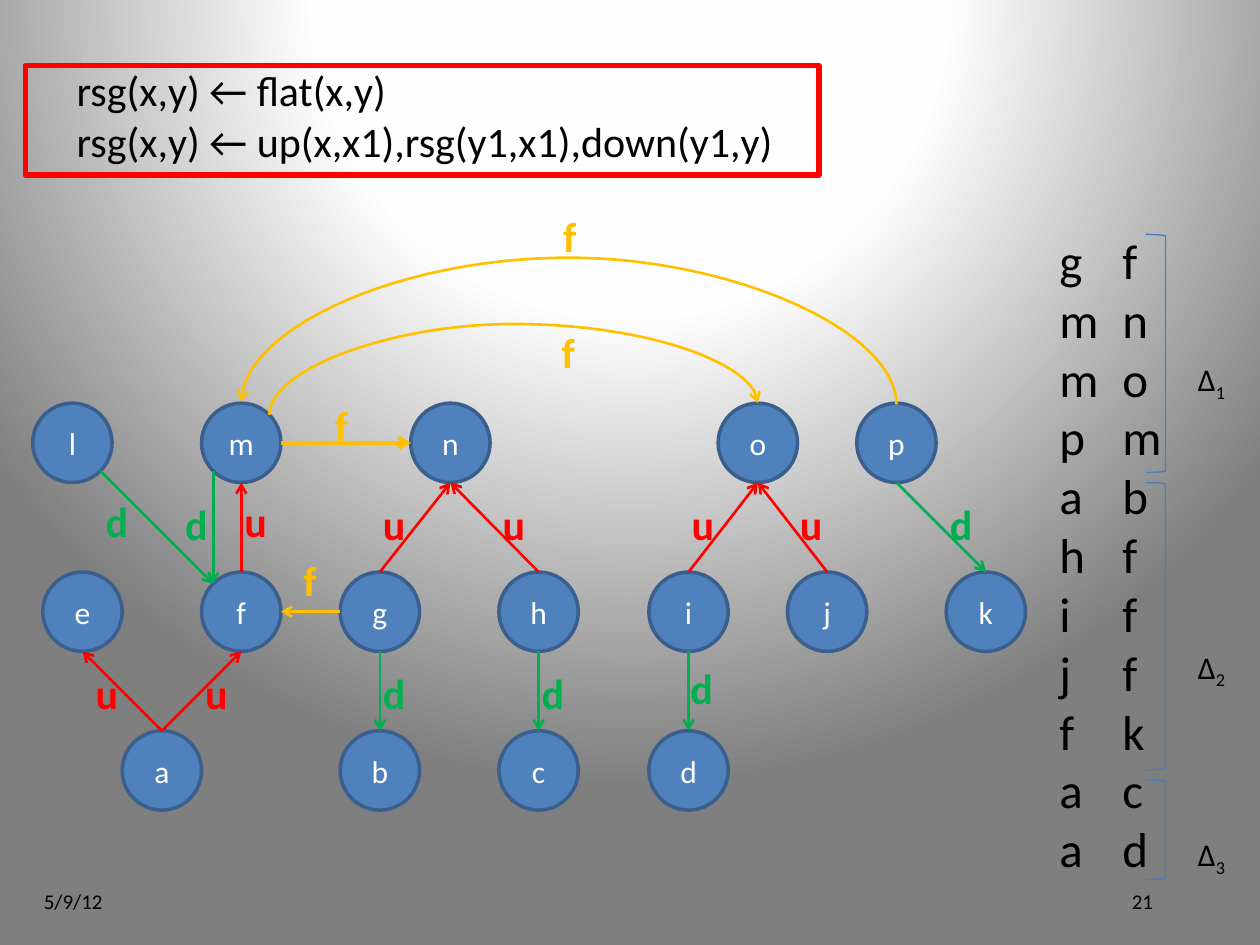
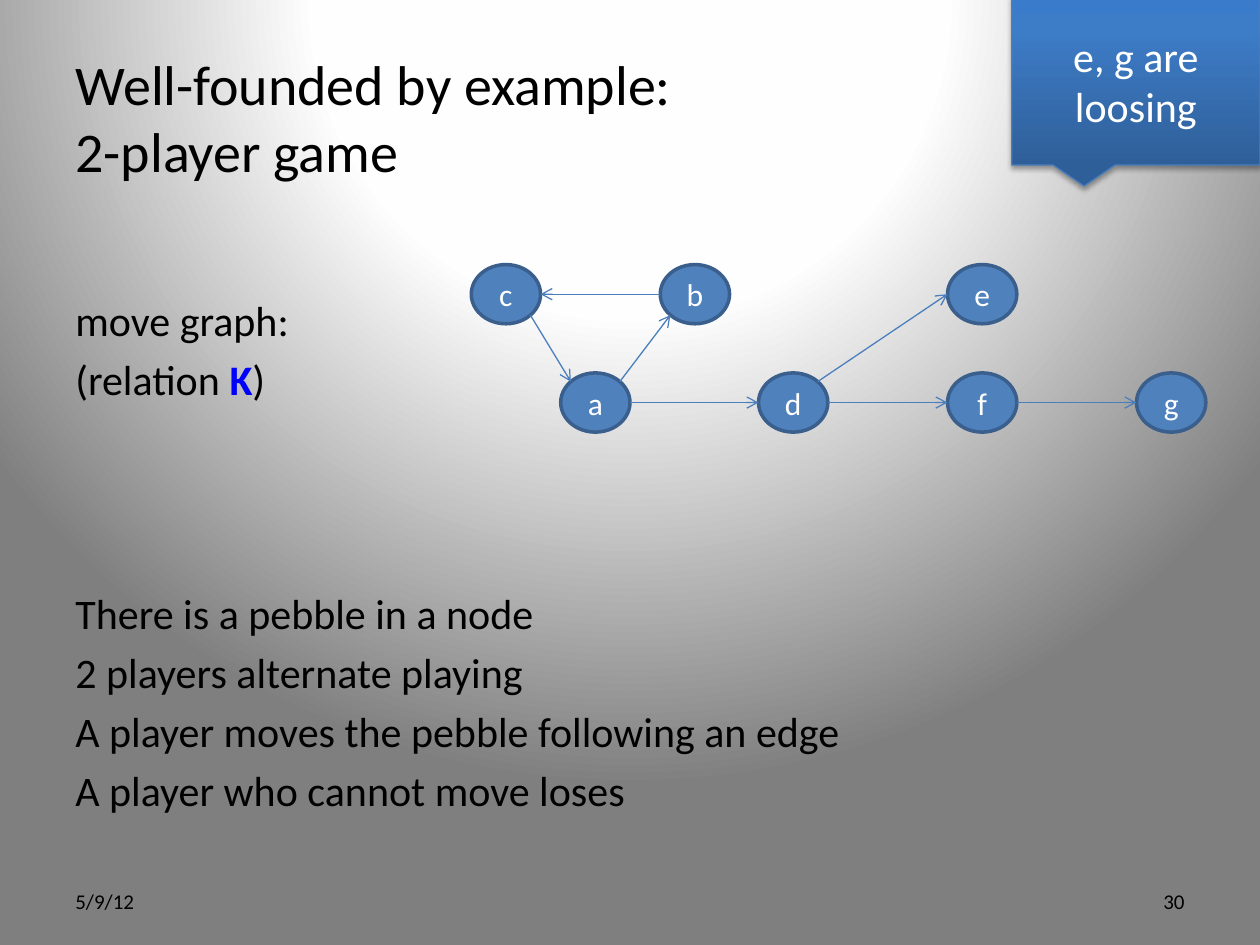
import math

import lxml.etree
import pptx
import pptx.dml.color
import pptx.enum.shapes
import pptx.enum.text
import pptx.oxml.ns
import pptx.util

Inches = pptx.util.Inches
Pt = pptx.util.Pt
RGBColor = pptx.dml.color.RGBColor
SHAPE = pptx.enum.shapes.MSO_SHAPE
LINK = pptx.enum.shapes.MSO_CONNECTOR
ALIGN = pptx.enum.text.PP_ALIGN
ANCHOR = pptx.enum.text.MSO_ANCHOR
qn = pptx.oxml.ns.qn

BLACK = RGBColor(0x00, 0x00, 0x00)
WHITE = RGBColor(0xFF, 0xFF, 0xFF)
PEARL = RGBColor(0xFE, 0xFE, 0xFE)
GREY = RGBColor(0x7F, 0x7F, 0x7F)
BLUE = RGBColor(0x4F, 0x81, 0xBD)
NAVY = RGBColor(0x3A, 0x5F, 0x8C)
STEEL = RGBColor(0x4B, 0x7E, 0xBC)
PURE = RGBColor(0x00, 0x00, 0xFF)
RED = RGBColor(0xFF, 0x00, 0x00)
GREEN = RGBColor(0x00, 0xB0, 0x50)
GOLD = RGBColor(0xFF, 0xC0, 0x00)

FONT = "Calibri"
SITES = "N NW W SW S SE E NE".split()
KINDS = {"u": RED, "d": GREEN, "f": GOLD}
BACK = ((0, WHITE), (40, PEARL), (100, GREY))
BADGE = ((0, RGBColor(0x2F, 0x5F, 0x99)), (80, RGBColor(0x3D, 0x7C, 0xC7)),
         (100, RGBColor(0x3A, 0x7C, 0xCB)))

TREE = (
    (0, "lmnop", (0, 1.34, 3, 5.44, 6.54)),
    (1.34, "efghijk", (0.08, 1.34, 2.44, 3.7, 4.89, 5.99, 7.25)),
    (2.6, "abcd", (0.71, 2.44, 3.7, 4.89)),
)
TREE_EDGES = (
    ("u", "a", "N", "f", "S", 1.27, 2.05),
    ("u", "a", "N", "e", "S", 0.4, 2.05),
    ("d", "g", "S", "b", "N", 2.68, 2.05),
    ("d", "h", "S", "c", "N", 3.94, 2.05),
    ("d", "i", "S", "d", "N", 5.12, 2.01),
    ("u", "f", "N", "m", "S", 1.58, 0.68),
    ("u", "g", "N", "n", "S", 2.68, 0.71),
    ("u", "h", "N", "n", "S", 3.63, 0.71),
    ("u", "i", "N", "o", "S", 5.13, 0.71),
    ("u", "j", "N", "o", "S", 5.99, 0.71),
    ("d", "l", "SE", "f", "NW", 0.48, 0.68),
    ("d", "m", "SW", "f", "NW", 1.11, 0.71),
    ("d", "p", "S", "k", "N", 7.18, 0.71),
    ("f", "m", "E", "n", "W", 2.3, -0.08),
    ("f", "g", "W", "f", "E", 2.05, 1.15),
)
TREE_ARCS = (
    ("m", "NE", "o", "N", -0.63, 4.1, -0.66),
    ("p", "N", "m", "N", -1.16, 4.11, -1.58),
)
GAME = (
    (0, "cbe", (0, 1.5, 3.78)),
    (0.86, "adfg", (0.71, 2.28, 3.78, 5.28)),
)
GAME_EDGES = (
    ("b", "W", "c", "E"), ("a", "NE", "b", "SW"), ("c", "SE", "a", "NW"),
    ("a", "E", "d", "W"), ("d", "E", "f", "W"), ("f", "E", "g", "W"),
    ("d", "NE", "e", "W"),
)
PAIRS = "gf mn mo pm ab hf if jf fk ac ad".split()
GROUPS = ((0.08, 1.89, 1.03), (2.05, 2.28, 3.31), (4.41, 0.79, 4.8))
RULES = ("There is a pebble in a node", "2 players alternate playing",
         "A player moves the pebble following an edge",
         "A player who cannot move loses")


def put(item, **values):
    for key, value in values.items():
        setattr(item, key, value)


def add(parent, tag, **values):
    return lxml.etree.SubElement(parent, qn(tag), **values)


def write(para, text, size, color=BLACK, bold=False):
    run = para.add_run()
    run.text = text
    put(run.font, name=FONT, size=Pt(size), bold=bold)
    run.font.color.rgb = color
    return run


def label(slide, box, text, size, color=BLACK, bold=False, align=ALIGN.LEFT,
          anchor=ANCHOR.TOP, wrap=True):
    frame = slide.shapes.add_textbox(*map(Inches, box)).text_frame
    put(frame, word_wrap=wrap, vertical_anchor=anchor)
    for count, line in enumerate(text.split("\n")):
        para = frame.add_paragraph() if count else frame.paragraphs[0]
        para.alignment = align
        write(para, line, size, color, bold)
    return frame


def outline(shape, color, width):
    shape.line.color.rgb = color
    shape.line.width = Pt(width)


def draw(slide, kind, box, fill, color, width):
    shape = slide.shapes.add_shape(kind, *map(Inches, box))
    shape.shadow.inherit = False
    if fill is None:
        shape.fill.background()
    else:
        shape.fill.solid()
        shape.fill.fore_color.rgb = fill
    outline(shape, color, width)
    return shape


def center(shape, text, size):
    frame = shape.text_frame
    put(frame, word_wrap=True, vertical_anchor=ANCHOR.MIDDLE)
    frame.paragraphs[0].alignment = ALIGN.CENTER
    write(frame.paragraphs[0], text, size, WHITE)


def blend(root, fill, stops):
    fill.gradient()
    grad = root.find(".//" + qn("a:gradFill"))
    for child in list(grad):
        grad.remove(child)
    group = add(grad, "a:gsLst")
    for place, color in stops:
        add(add(group, "a:gs", pos=str(place * 1000)), "a:srgbClr", val=str(color))
    return grad


def start(deck, date, number, shift):
    slide = deck.slides.add_slide(deck.slide_layouts[6])
    grad = blend(slide.element, slide.background.fill, BACK)
    add(add(grad, "a:path", path="circle"), "a:fillToRect",
        l="50000", t="-80000", r="50000", b="180000")
    for left, text, align in ((shift, date, ALIGN.LEFT),
                              (shift + 6.67, number, ALIGN.RIGHT)):
        label(slide, (left, 6.95, 2.33, 0.4), text, 12, align=align,
              anchor=ANCHOR.MIDDLE)
    return slide


def title(slide, box, first, second, size):
    frame = label(slide, box, first, size, anchor=ANCHOR.MIDDLE)
    para = frame.paragraphs[0]
    para.add_line_break()
    write(para, second, size)


def site(node, side):
    turn = math.radians(45 * SITES.index(side))
    x = node.left + node.width / 2 * (1 - math.sin(turn))
    y = node.top + node.height / 2 * (1 - math.cos(turn))
    return round(x), round(y)


def arrow(link, color, width):
    outline(link, color, width)
    props = link.element.spPr
    add(props.find(qn("a:ln")), "a:tailEnd", type="arrow")
    add(props, "a:effectLst")


def edge(slide, nodes, first, out, last, into, color, width):
    ends = site(nodes[first], out) + site(nodes[last], into)
    link = slide.shapes.add_connector(LINK.STRAIGHT, *ends)
    arrow(link, color, width)
    glue = link.element.nvCxnSpPr.cNvCxnSpPr
    for tag, name, side in (("a:stCxn", first, out), ("a:endCxn", last, into)):
        add(glue, tag, id=str(nodes[name].shape_id), idx=str(SITES.index(side)))


def arc(slide, tail, head, peak, color, width):
    rise = max(tail[1] - head[1], Inches(0.02))
    span = abs(head[0] - tail[0])
    link = slide.shapes.add_connector(LINK.CURVE, 0, 0, rise, span)
    put(link, left=(tail[0] + head[0] - rise) // 2,
        top=(tail[1] + head[1] - span) // 2)
    frame = link.element.spPr.find(qn("a:xfrm"))
    frame.set("rot", str(270 * 60000))
    if tail[0] > head[0]:
        frame.set("flipV", "1")
    geom = link.element.spPr.find(qn("a:prstGeom"))
    bend = round((tail[1] - peak) / rise * 100000)
    add(geom.find(qn("a:avLst")), "a:gd", name="adj1", fmla=f"val {bend}")
    arrow(link, color, width)


def place(slide, x, y, rows, width, height):
    nodes = {}
    for down, names, spots in rows:
        for name, across in zip(names, spots):
            box = (x + across, y + down, width, height)
            nodes[name] = draw(slide, SHAPE.OVAL, box, BLUE, NAVY, 2)
            center(nodes[name], name, 18)
    return nodes


def tree(slide, x, y):
    def mark(kind, across, down):
        wide = 0.31 if kind == "f" else 0.38
        label(slide, (x + across, y + down, wide, 0.5), kind, 24,
              KINDS[kind], True, wrap=False)

    nodes = place(slide, x, y, TREE, 0.63, 0.63)
    for kind, first, out, last, into, across, down in TREE_EDGES:
        width = 2.25 if first + last == "mn" else 1.5
        edge(slide, nodes, first, out, last, into, KINDS[kind], width)
        mark(kind, across, down)
    for first, out, last, into, peak, across, down in TREE_ARCS:
        arc(slide, site(nodes[first], out), site(nodes[last], into),
            Inches(y + peak), GOLD, 1.5)
        mark("f", across, down)


def pairs(slide, x, y):
    frame = label(slide, (x, y, 1.4, 5.28), "\n".join("\t".join(p) for p in PAIRS), 28)
    for para in frame.paragraphs:
        props = para._p.get_or_add_pPr()
        props.set("marL", str(Inches(0.08)))
        props.set("indent", "0")
        add(add(props, "a:tabLst"), "a:tab", pos=str(Inches(0.55)), algn="l")
    for count, (down, height, drop) in enumerate(GROUPS, 1):
        draw(slide, SHAPE.RIGHT_BRACKET, (x + 0.86, y + down, 0.16, height),
             None, STEEL, 0.75)
        name = label(slide, (x + 1.18, y + drop, 0.44, 0.4), "Δ", 18, wrap=False)
        run = write(name.paragraphs[0], str(count), 18)
        run._r.get_or_add_rPr().set("baseline", "-25000")


def game(slide, x, y):
    nodes = place(slide, x, y, GAME, 0.55, 0.47)
    for ends in GAME_EDGES:
        edge(slide, nodes, *ends, STEEL, 0.75)


def body(slide, box):
    frame = label(slide, box, "\n".join(("move graph:", "(relation ") + RULES), 24)
    frame.margin_top = Inches(0.59)
    lines = frame.paragraphs
    write(lines[1], "K", 24, PURE, True)
    write(lines[1], ")", 24)
    for para in lines[1:]:
        para.space_before = Pt(4.8)
    lines[2].space_before = Pt(105)


def badge(slide, box, text):
    shape = draw(slide, SHAPE.RECTANGULAR_CALLOUT, box, BLUE, STEEL, 0.75)
    grad = blend(shape.element, shape.fill, BADGE)
    add(grad, "a:lin", ang=str(270 * 60000), scaled="0")
    glow = add(shape.element.spPr.find(qn("a:effectLst")), "a:outerShdw",
               blurRad=str(Pt(3.1)), dist=str(Pt(1.8)), dir=str(90 * 60000),
               rotWithShape="0")
    add(add(glow, "a:srgbClr", val=str(BLACK)), "a:alpha", val="35000")
    center(shape, text, 24)


def main():
    deck = pptx.Presentation()
    put(deck, slide_width=Inches(10), slide_height=Inches(7.5))

    slide = start(deck, "5/9/12", "21", 0.25)
    title(slide, (0.51, 0.29, 9, 1.25), "rsg(x,y) ← flat(x,y)",
          "rsg(x,y) ← up(x,x1),rsg(y1,x1),down(y1,y)", 24)
    tree(slide, 0.26, 3.2)
    pairs(slide, 8.23, 1.78)
    draw(slide, SHAPE.RECTANGLE, (0.2, 0.52, 6.3, 0.87), None, RED, 3)

    slide = start(deck, "5/9/12", "30", 0.5)
    title(slide, (0.5, 0.3, 9, 1.25), "Well-founded by example:",
          "2-player game", 32)
    body(slide, (0.5, 1.75, 9, 4.95))
    game(slide, 3.74, 2.1)
    badge(slide, (8.03, -0.03, 1.97, 1.34), "e, g are loosing")

    deck.save("out.pptx")


if __name__ == "__main__":
    main()
